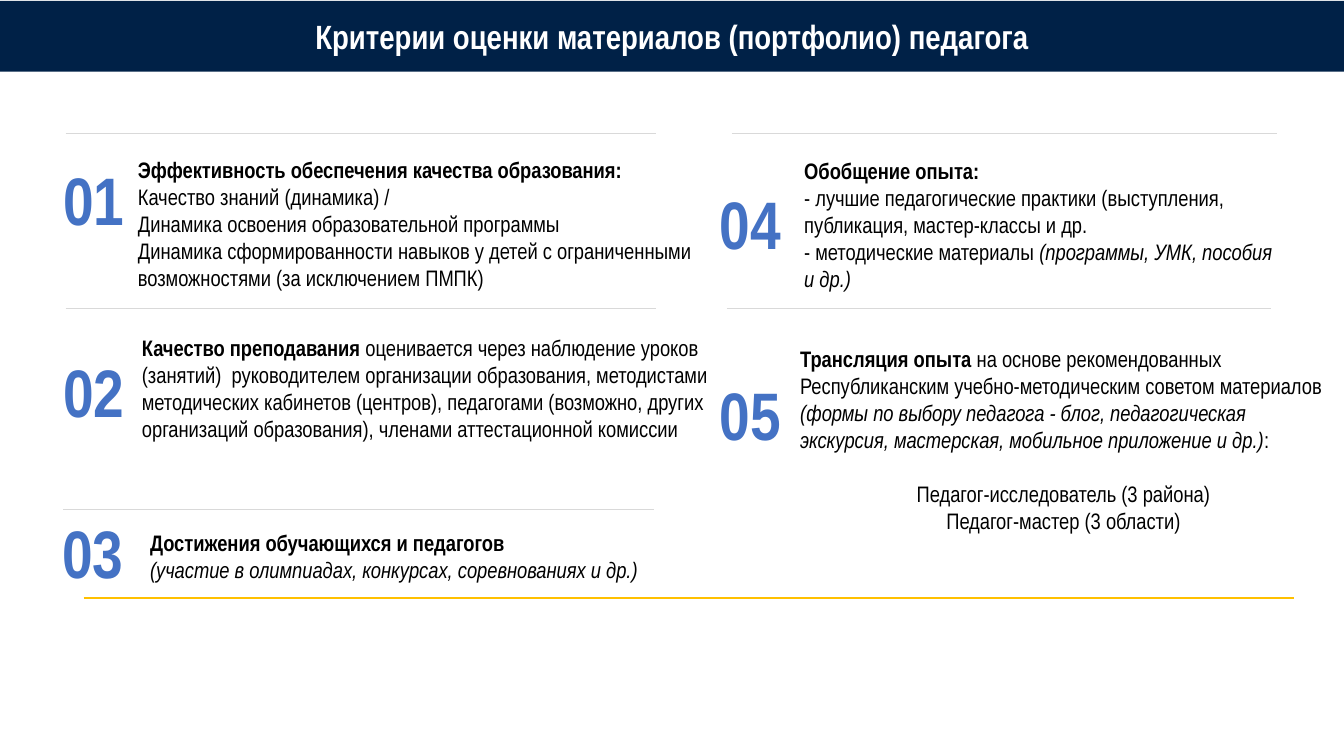
from dataclasses import dataclass

import pptx
import pptx.dml.color
import pptx.enum.shapes
import pptx.enum.text
import pptx.oxml.ns
import pptx.util
from lxml import etree

RGBColor = pptx.dml.color.RGBColor
ALIGN = pptx.enum.text.PP_ALIGN

NAVY = RGBColor(0x00, 0x21, 0x47)
BLUE = RGBColor(0x44, 0x72, 0xC4)
GOLD = RGBColor(0xFF, 0xC0, 0x00)
GREY = RGBColor(0xD9, 0xD9, 0xD9)
BLACK = RGBColor(0x00, 0x00, 0x00)
WHITE = RGBColor(0xFF, 0xFF, 0xFF)
FONT = "Arial Narrow"

# The slide is a grid of square cells
COLUMNS, ROWS = 133.33, 75
CELL = pptx.util.Inches(0.1)


@dataclass(frozen=True)
class Run:
    text: str
    bold: bool = False
    italic: bool = False


@dataclass(frozen=True)
class Paragraph:
    runs: tuple[Run, ...]
    align: ALIGN = ALIGN.LEFT
    space_before: float = 0


@dataclass(frozen=True)
class Box:
    column: float
    row: float
    width: float
    height: float


@dataclass(frozen=True)
class Criterion:
    number: str
    number_column: float
    number_row: float
    body: Box
    paragraphs: tuple[Paragraph, ...]


@dataclass(frozen=True)
class Rule:
    column: float
    row: float
    width: float
    color: RGBColor = GREY
    weight: float = 0.5


def line(*runs: Run, **layout) -> Paragraph:
    return Paragraph(runs, **layout)


TITLE = line(Run("Критерии оценки материалов (портфолио) педагога", bold=True), align=ALIGN.CENTER)

CRITERIA = (
    Criterion("01", 5.3, 15.2, Box(12.7, 15, 59.4, 14.5), (
        line(Run("Эффективность обеспечения качества образования:", bold=True)),
        line(Run("Качество знаний (динамика) /")),
        line(Run("Динамика освоения образовательной программы")),
        line(Run("Динамика сформированности навыков у детей с ограниченными "
                 "возможностями (за исключением ПМПК)")),
    )),
    Criterion("02", 5.3, 34.3, Box(13.1, 32.7, 58.6, 14.5), (
        line(Run("Качество преподавания ", bold=True),
             Run("оценивается через наблюдение уроков (занятий)  руководителем организации "
                 "образования, методистами методических кабинетов (центров), педагогами "
                 "(возможно, других организаций образования), членами аттестационной комиссии")),
    )),
    Criterion("03", 5.2, 50.2, Box(13.9, 52, 56.9, 6.4), (
        line(Run("Достижения обучающихся и педагогов", bold=True)),
        line(Run("(участие в олимпиадах, конкурсах, соревнованиях и др.)", italic=True)),
    )),
    Criterion("04", 70.4, 17.6, Box(78.8, 15.1, 49.5, 14.5), (
        line(Run("Обобщение опыта:", bold=True)),
        line(Run("- лучшие педагогические практики (выступления, публикация, мастер-классы и др.")),
        line(Run("- методические материалы "),
             Run("(программы, УМК, пособия и др.)", italic=True)),
    )),
    Criterion("05", 70.4, 36.5, Box(78.4, 33.8, 54.2, 22.6), (
        line(Run("Трансляция опыта ", bold=True),
             Run("на основе рекомендованных Республиканским учебно-методическим советом материалов "),
             Run("(формы по выбору педагога - блог, педагогическая экскурсия, мастерская, "
                 "мобильное приложение и др.)", italic=True),
             Run(":")),
        line(Run("Педагог-исследователь (3 района)"), align=ALIGN.CENTER, space_before=19.2),
        line(Run("Педагог-мастер (3 области)"), align=ALIGN.CENTER),
    )),
)

RULES = (
    Rule(6.5, 13.2, 58.6),
    Rule(6.5, 30.6, 58.6),
    Rule(6.3, 50.5, 58.6),
    Rule(72.6, 13.2, 54.1),
    Rule(72.1, 30.6, 54),
    Rule(8.3, 59.3, 120.1, GOLD, 1.5),
)


def cells(count: float) -> pptx.util.Emu:
    return pptx.util.Emu(round(count * CELL))


def write(frame, paragraphs, *, size: float, color: RGBColor) -> None:
    """Fill a text frame with formatted paragraphs."""
    for index, content in enumerate(paragraphs):
        paragraph = frame.paragraphs[0] if index == 0 else frame.add_paragraph()
        paragraph.alignment = content.align
        paragraph.line_spacing = 1.0
        paragraph.space_before = pptx.util.Pt(content.space_before)
        for part in content.runs:
            run = paragraph.add_run()
            run.text = part.text
            run.font.name = FONT
            run.font.size = pptx.util.Pt(size)
            run.font.bold = part.bold
            run.font.italic = part.italic
            run.font.color.rgb = color


def add_text(slide, box: Box, paragraphs, *, size: float, color: RGBColor, wrap: bool = True) -> None:
    frame = slide.shapes.add_textbox(
        *map(cells, (box.column, box.row, box.width, box.height))).text_frame
    frame.word_wrap = wrap
    frame.auto_size = pptx.enum.text.MSO_AUTO_SIZE.SHAPE_TO_FIT_TEXT
    write(frame, paragraphs, size=size, color=color)


def add_criterion(slide, criterion: Criterion) -> None:
    number_box = Box(criterion.number_column, criterion.number_row, 8.2, 9.1)
    add_text(slide, number_box, [line(Run(criterion.number, bold=True))],
             size=48, color=BLUE, wrap=False)
    add_text(slide, criterion.body, criterion.paragraphs, size=16, color=BLACK)


def add_rule(slide, rule: Rule) -> None:
    connector = slide.shapes.add_connector(
        pptx.enum.shapes.MSO_CONNECTOR.STRAIGHT,
        *map(cells, (rule.column, rule.row, rule.column + rule.width, rule.row)))
    connector.line.color.rgb = rule.color
    connector.line.width = pptx.util.Pt(rule.weight)
    properties = connector._element.spPr
    etree.SubElement(properties, pptx.oxml.ns.qn("a:effectLst"))


def format_title(title) -> None:
    title.left, title.top, title.width, title.height = map(cells, (0, 0.1, COLUMNS, 7))
    title.fill.solid()
    title.fill.fore_color.rgb = NAVY
    frame = title.text_frame
    frame.auto_size = pptx.enum.text.MSO_AUTO_SIZE.NONE
    frame.vertical_anchor = pptx.enum.text.MSO_ANCHOR.MIDDLE
    write(frame, [TITLE], size=24, color=WHITE)


def main() -> None:
    deck = pptx.Presentation()
    deck.slide_width, deck.slide_height = cells(COLUMNS), cells(ROWS)
    slide = deck.slides.add_slide(deck.slide_layouts[5])

    # Title band
    format_title(slide.shapes.title)
    # Numbered criteria
    for criterion in CRITERIA:
        add_criterion(slide, criterion)
    # Separators and the closing line
    for rule in RULES:
        add_rule(slide, rule)

    deck.save("out.pptx")


if __name__ == "__main__":
    main()
